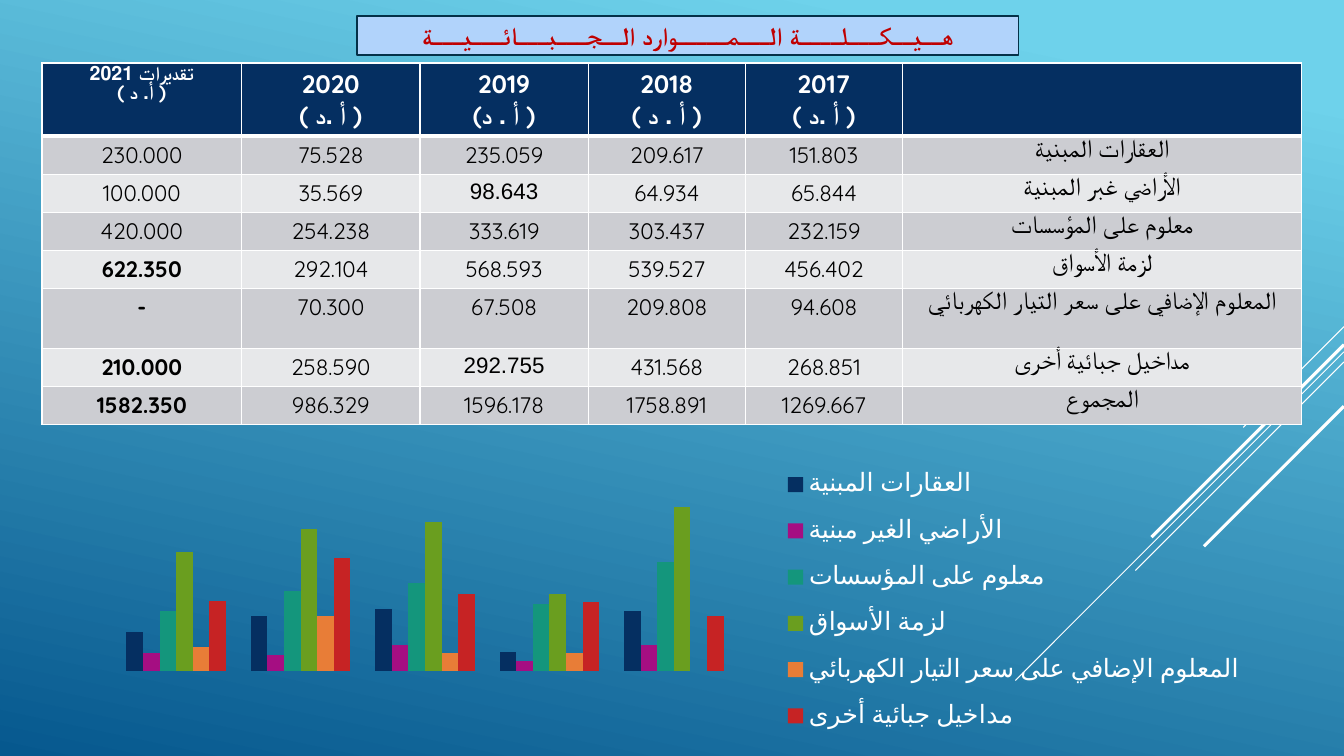
from lxml import etree
from pptx import Presentation
from pptx.chart.data import CategoryChartData
from pptx.dml.color import RGBColor
from pptx.enum import chart as ch, text
from pptx.enum.shapes import MSO_CONNECTOR
from pptx.oxml import parse_xml
from pptx.oxml.ns import nsdecls, qn
from pptx.util import Pt

# Content
TITLE = "هــيــكـــلــــة الـــمـــــوارد الــجـــبـــائـــيـــة"
HEADINGS = [("تقديرات 2021", "( أ. د )"), ("2020", "( أ .د )"), ("2019", "(أ . د )"),
            ("2018", "( أ . د )"), ("2017", "( أ .د )"), ()]
REVENUES = [
    ("230.000", "75.528", "235.059", "209.617", "151.803", "العقارات المبنية"),
    ("100.000", "35.569", "98.643", "64.934", "65.844", "الأراضي غبر المبنية"),
    ("420.000", "254.238", "333.619", "303.437", "232.159", "معلوم على المؤسسات"),
    ("622.350", "292.104", "568.593", "539.527", "456.402", "لزمة الأسواق"),
    ("-", "70.300", "67.508", "209.808", "94.608", "المعلوم الإضافي على سعر التيار الكهربائي"),
    ("210.000", "258.590", "292.755", "431.568", "268.851", "مداخيل جبائية أخرى"),
    ("1582.350", "986.329", "1596.178", "1758.891", "1269.667", "المجموع"),
]
ARIAL_FIGURES = {"98.643", "292.755"}
FIRST_BOLD_ROW = 4
CHART_SERIES = [
    ("العقارات المبنية", (24, 34, 38, 12, 37), "052F61"),
    ("الأراضي الغير مبنية", (11, 10, 16, 6, 16), "A50E82"),
    ("معلوم على المؤسسات", (37, 49, 54, 41, 67), "14967C"),
    ("لزمة الأسواق", (73, 87, 91, 47, 100), "6A9E1F"),
    ("المعلوم الإضافي على سعر التيار الكهربائي", (15, 34, 11, 11, None), "E87D37"),
    ("مداخيل جبائية أخرى", (43, 69, 47, 42, 34), "C62324"),
]
# Diagonal rays: height on the right edge, run down to the left, weight
RAYS = [(233.3, 72, 0.75), (251.3, 234.7, 0.75), (258.5, 149, 0.75),
        (246.2, 137.5, 2.25), (290.2, 100, 2.25)]

THEME = {
    "sky": "6ED2EB", "sea": "06588E", "white": "FFFFFF", "black": "000000",
    "header": "052F61", "bands": ("CCCDD2", "E7E8EA"),
    "title_fill": "B1D3FB", "title_line": "043148", "title_text": "C00000",
    "font": "Quicksand", "plain_font": "Arial",
    "large": 18, "figure": 16, "small": 14,
}
SLIDE_W, SLIDE_H = 960, 540
COLUMN_WIDTHS = (142.6, 127.4, 120.2, 112.3, 112.3, 285.1)
ROW_HEIGHTS = (51.6, 27, 27, 27, 27, 43, 27, 27)


def rgb(value):
    return RGBColor.from_string(value)


def write(frame, *lines, size=18, color="000000", font="Quicksand", bold=False, spacing=1.0):
    for index, line in enumerate(lines):
        paragraph = frame.paragraphs[0] if index == 0 else frame.add_paragraph()
        paragraph.alignment = text.PP_ALIGN.CENTER
        paragraph.line_spacing = spacing
        run = paragraph.add_run()
        run.text = line
        run.font.size, run.font.bold, run.font.name = Pt(size), bold, font
        run.font.color.rgb = rgb(color)


def border(cell, side, weight):
    line = etree.SubElement(cell._tc.get_or_add_tcPr(), qn(f"a:ln{side}"), w=str(Pt(weight)))
    fill = etree.SubElement(line, qn("a:solidFill"))
    etree.SubElement(fill, qn("a:srgbClr"), val=THEME["white"])


def place(element, x, y, w, h, inner=False):
    """Give a chart part a fixed place, as fractions of the chart."""
    for old in element.findall(qn("c:layout")):
        element.remove(old)
    target = '<c:layoutTarget val="inner"/>' if inner else ""
    layout = parse_xml(
        f'<c:layout {nsdecls("c")}><c:manualLayout>{target}<c:xMode val="edge"/>'
        f'<c:yMode val="edge"/><c:x val="{x}"/><c:y val="{y}"/><c:w val="{w}"/>'
        f'<c:h val="{h}"/></c:manualLayout></c:layout>')
    element.insert(0 if inner else 1, layout)


def add_background(slide):
    fill = slide.background.fill
    fill.gradient()
    fill.gradient_angle = 258
    for stop, position, color in zip(fill.gradient_stops, (0.1, 1), ("sky", "sea")):
        stop.position = position
        stop.color.rgb = rgb(THEME[color])
    for top, run, weight in RAYS:
        ray = slide.shapes.add_connector(MSO_CONNECTOR.STRAIGHT, Pt(SLIDE_W), Pt(top),
                                         Pt(SLIDE_W - run), Pt(top + run))
        ray.line.color.rgb, ray.line.width = rgb(THEME["white"]), Pt(weight)
        etree.SubElement(ray._element.spPr, qn("a:effectLst"))


def add_title(slide):
    title = slide.shapes.title
    title.left, title.top, title.width, title.height = Pt(255), Pt(11.3), Pt(472.5), Pt(28)
    outline = etree.SubElement(title._element.spPr, qn("a:prstGeom"), prst="roundRect")
    etree.SubElement(outline, qn("a:avLst"))
    title.fill.solid()
    title.fill.fore_color.rgb = rgb(THEME["title_fill"])
    title.line.color.rgb, title.line.width = rgb(THEME["title_line"]), Pt(1.25)
    frame = title.text_frame
    frame.auto_size, frame.word_wrap = text.MSO_AUTO_SIZE.NONE, True
    frame.vertical_anchor = text.MSO_ANCHOR.MIDDLE
    write(frame, TITLE, size=THEME["large"], color=THEME["title_text"],
          font=THEME["plain_font"], bold=True)


def add_revenue_table(slide):
    table = slide.shapes.add_table(len(ROW_HEIGHTS), len(COLUMN_WIDTHS), Pt(30), Pt(45),
                                   Pt(sum(COLUMN_WIDTHS)), Pt(sum(ROW_HEIGHTS))).table
    for column, width in zip(table.columns, COLUMN_WIDTHS):
        column.width = Pt(width)
    for row, height in zip(table.rows, ROW_HEIGHTS):
        row.height = Pt(height)
    for r, entries in enumerate([HEADINGS, *REVENUES]):
        for c, entry in enumerate(entries):
            cell = table.cell(r, c)
            cell.margin_left = cell.margin_right = Pt(9.4)
            cell.margin_top = cell.margin_bottom = Pt(3.6)
            for side in "LRTB":
                heavy = (r == 0 and side == "B") or (r == 1 and side == "T")
                border(cell, side, 3 if heavy else 1)
            cell.fill.solid()
            cell.fill.fore_color.rgb = rgb(THEME["bands"][(r - 1) % 2] if r else THEME["header"])
            if r == 0:
                write(cell.text_frame, *entry, size=THEME["large" if c else "small"],
                      color=THEME["white"], bold=True, spacing=1.0 if c else 0.8)
            elif c == len(COLUMN_WIDTHS) - 1:
                write(cell.text_frame, entry, size=THEME["large"], spacing=0.8)
            else:
                font = THEME["plain_font" if entry in ARIAL_FIGURES else "font"]
                write(cell.text_frame, entry, size=THEME["figure"], font=font,
                      bold=c == 0 and r >= FIRST_BOLD_ROW)


def add_revenue_chart(slide):
    data = CategoryChartData()
    data.categories = ["1", "2", "3", "4", "5"]
    for name, values, _ in CHART_SERIES:
        data.add_series(name, values)
    chart = slide.shapes.add_chart(ch.XL_CHART_TYPE.COLUMN_CLUSTERED, Pt(0), Pt(315.4),
                                   Pt(905), Pt(224.6), data).chart
    chart.has_title = False
    chart.font.name, chart.font.size = THEME["font"], Pt(THEME["large"])
    chart.font.color.rgb = rgb(THEME["white"])
    chart.category_axis.visible = chart.value_axis.visible = False
    chart.value_axis.has_major_gridlines = False
    chart.value_axis.minimum_scale, chart.value_axis.maximum_scale = 0, 112
    plot = chart.plots[0]
    plot.gap_width, plot.overlap, plot.vary_by_categories = 150, 0, False
    for series, (_, _, color) in zip(plot.series, CHART_SERIES):
        series.format.fill.solid()
        series.format.fill.fore_color.rgb = rgb(color)
    chart.has_legend = True
    chart.legend.position = ch.XL_LEGEND_POSITION.RIGHT
    chart.legend.include_in_layout = False
    place(chart._chartSpace.chart.plotArea, 0.09, 0.147, 0.491, 0.584, inner=True)
    place(chart.legend._element, 0.61, 0.03, 0.38, 0.95)


def main():
    deck = Presentation()
    deck.slide_width, deck.slide_height = Pt(SLIDE_W), Pt(SLIDE_H)
    slide = deck.slides.add_slide(deck.slide_layouts[5])
    add_background(slide)
    add_title(slide)
    add_revenue_table(slide)
    add_revenue_chart(slide)
    deck.save("out.pptx")


if __name__ == "__main__":
    main()
